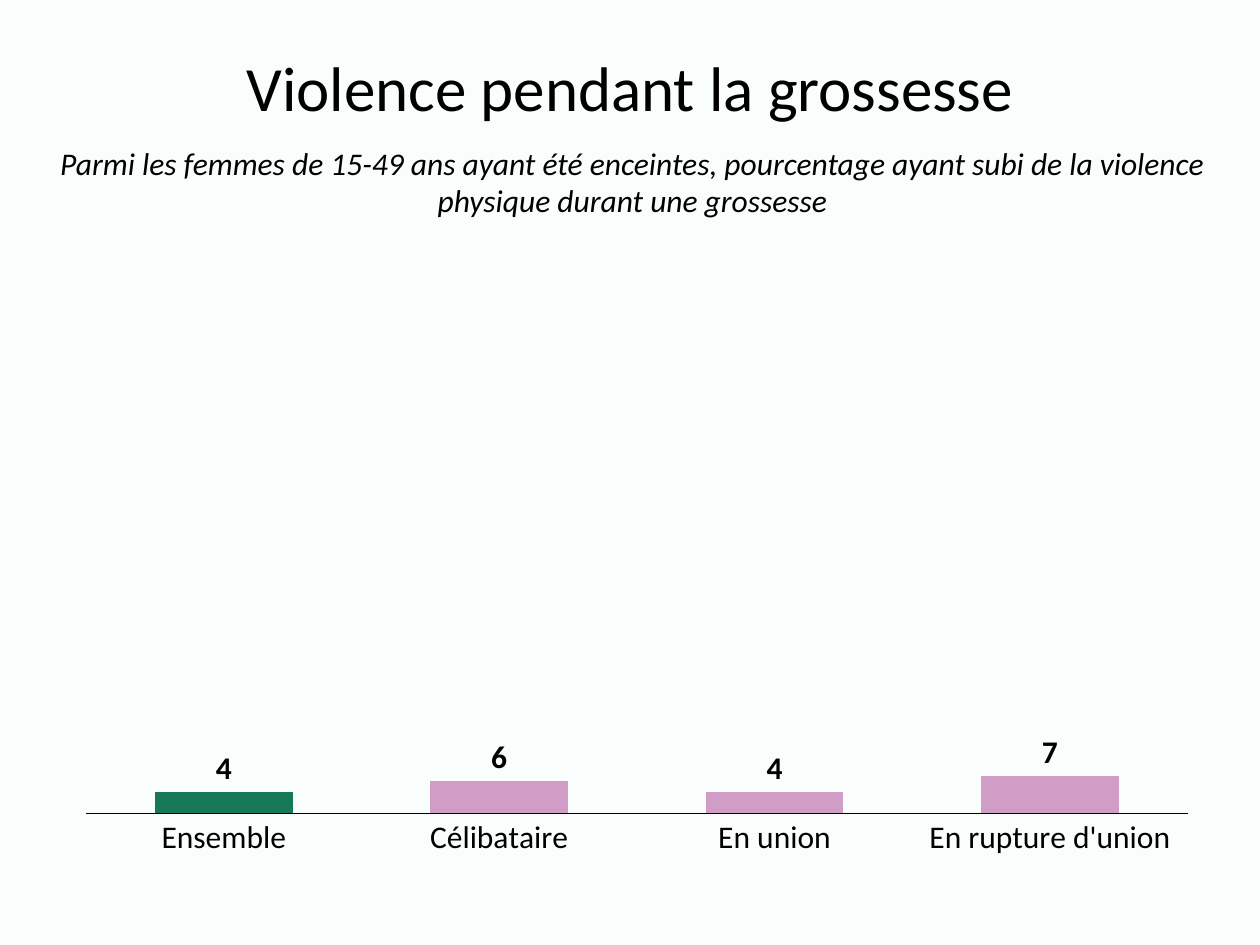
import pptx
import pptx.chart.data
import pptx.dml.color
import pptx.enum.chart
import pptx.enum.text
import pptx.util
from lxml import etree
from pptx.util import Inches, Pt

FONT = "Calibri"
COLORS = {
    "background": "F9FEFC",
    "text": "000000",
    "total": "177858",
    "group": "CF9DC5",
}
CATEGORIES = ["Ensemble", "Célibataire", "En union", "En rupture d'union"]
PERCENTAGES = [4, 6, 4, 7]
PLOT_LAYOUT = {"x": 0.017, "y": 0.072, "w": 0.966, "h": 0.745}


def color(name):
    return pptx.dml.color.RGBColor.from_string(COLORS[name])


def set_font(font, size, bold=False, italic=False):
    font.name = FONT
    font.size = Pt(size)
    font.bold = bold
    font.italic = italic
    font.color.rgb = color("text")


def place(shape, box):
    shape.left, shape.top, shape.width, shape.height = box


def add_title(slide, box):
    title = slide.shapes.title
    place(title, box)
    frame = title.text_frame
    frame.text = "Violence pendant la grossesse"
    frame.vertical_anchor = pptx.enum.text.MSO_ANCHOR.MIDDLE
    paragraph = frame.paragraphs[0]
    paragraph.alignment = pptx.enum.text.PP_ALIGN.CENTER
    paragraph.line_spacing = 0.9
    set_font(paragraph.font, 36)


def add_subtitle(slide, box):
    frame = slide.shapes.add_textbox(*box).text_frame
    frame.word_wrap = True
    frame.text = (
        "Parmi les femmes de 15-49 ans ayant été enceintes, pourcentage "
        "ayant subi de la violence physique durant une grossesse"
    )
    paragraph = frame.paragraphs[0]
    paragraph.alignment = pptx.enum.text.PP_ALIGN.CENTER
    set_font(paragraph.font, 18, italic=True)


def fix_plot_area(chart):
    """Pin the inner plot area to fixed fractions of the chart."""
    plot_area = chart.plots[0]._element.getparent()
    namespace = etree.QName(plot_area).namespace

    def tag(name):
        return f"{{{namespace}}}{name}"

    for old_layout in plot_area.findall(tag("layout")):
        plot_area.remove(old_layout)
    layout = etree.Element(tag("layout"))
    manual = etree.SubElement(layout, tag("manualLayout"))
    settings = {"layoutTarget": "inner", "xMode": "edge", "yMode": "edge", **PLOT_LAYOUT}
    for name, value in settings.items():
        etree.SubElement(manual, tag(name), val=str(value))
    plot_area.insert(0, layout)


def add_violence_chart(slide, box):
    data = pptx.chart.data.CategoryChartData()
    data.categories = CATEGORIES
    data.add_series("Series 1", PERCENTAGES)
    chart = slide.shapes.add_chart(
        pptx.enum.chart.XL_CHART_TYPE.COLUMN_CLUSTERED, *box, data
    ).chart
    chart.has_legend = False
    chart.has_title = False
    set_font(chart.font, 10)
    fix_plot_area(chart)

    # Axes
    category_axis = chart.category_axis
    category_axis.major_tick_mark = pptx.enum.chart.XL_TICK_MARK.NONE
    category_axis.format.line.color.rgb = color("text")
    category_axis.format.line.width = Pt(0.75)
    set_font(category_axis.tick_labels.font, 18)
    value_axis = chart.value_axis
    value_axis.minimum_scale = 0
    value_axis.maximum_scale = 100
    value_axis.has_major_gridlines = False
    value_axis.visible = False

    # Columns, with the total highlighted
    plot = chart.plots[0]
    plot.gap_width = 100
    plot.vary_by_categories = False
    series = plot.series[0]
    for columns, name in ((series, "group"), (series.points[0], "total")):
        columns.format.fill.solid()
        columns.format.fill.fore_color.rgb = color(name)

    # Value labels
    labels = series.data_labels
    labels.show_value = True
    labels.position = pptx.enum.chart.XL_LABEL_POSITION.OUTSIDE_END
    set_font(labels.font, 18, bold=True)


def main():
    presentation = pptx.Presentation()
    presentation.slide_width = Inches(10)
    presentation.slide_height = Inches(7.5)
    slide = presentation.slides.add_slide(presentation.slide_layouts[5])
    slide.background.fill.solid()
    slide.background.fill.fore_color.rgb = color("background")

    add_title(slide, (Inches(0), Inches(0), Inches(10), Inches(1.45)))
    add_violence_chart(slide, (Inches(0.53), Inches(1.8), Inches(9.05), Inches(5.7)))
    add_subtitle(slide, (Inches(0.02), Inches(1.09), Inches(10), Inches(0.71)))
    presentation.save("out.pptx")


if __name__ == "__main__":
    main()
